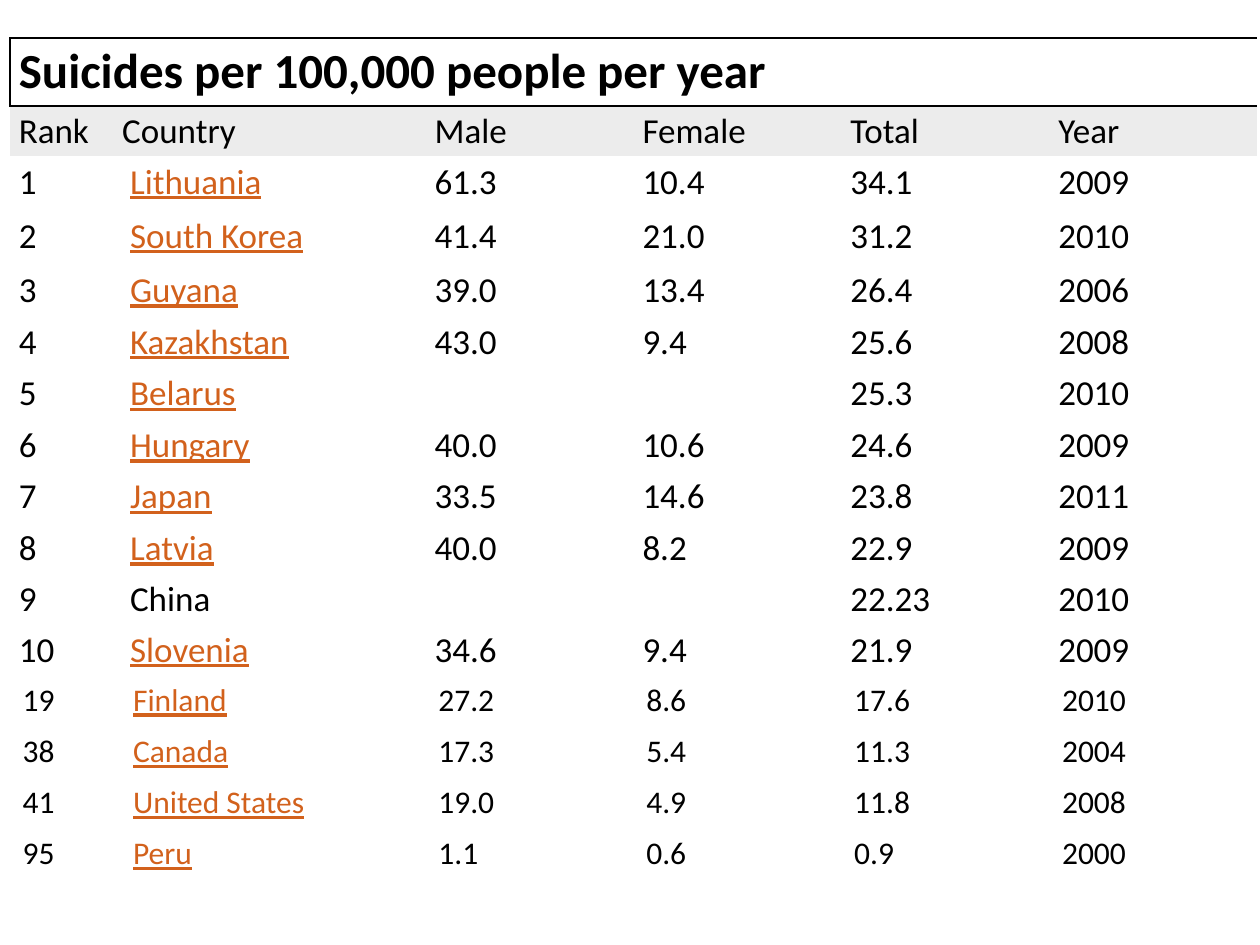
import pptx
import pptx.dml.color
import pptx.enum.text
import pptx.oxml
import pptx.oxml.ns
import pptx.util

Inches = pptx.util.Inches
BLACK = pptx.dml.color.RGBColor(0x00, 0x00, 0x00)
ORANGE = pptx.dml.color.RGBColor(0xD2, 0x61, 0x1C)
BAND = pptx.dml.color.RGBColor(0xEC, 0xEC, 0xEC)
NO_GRID_STYLE = "{2D5ABB26-0587-4C30-8999-92F81FD0307C}"

TITLE = "Suicides per 100,000 people per year"
HEADINGS = ("Rank", "Country", "Male", "Female", "Total", "Year")
TOP_TEN = (
    ("1", "Lithuania", "61.3", "10.4", "34.1", "2009"),
    ("2", "South Korea", "41.4", "21.0", "31.2", "2010"),
    ("3", "Guyana", "39.0", "13.4", "26.4", "2006"),
    ("4", "Kazakhstan", "43.0", "9.4", "25.6", "2008"),
    ("5", "Belarus", "", "", "25.3", "2010"),
    ("6", "Hungary", "40.0", "10.6", "24.6", "2009"),
    ("7", "Japan", "33.5", "14.6", "23.8", "2011"),
    ("8", "Latvia", "40.0", "8.2", "22.9", "2009"),
    ("9", "China", "", "", "22.23", "2010"),
    ("10", "Slovenia", "34.6", "9.4", "21.9", "2009"),
)
OTHERS = (
    ("19", "Finland", "27.2", "8.6", "17.6", "2010"),
    ("38", "Canada", "17.3", "5.4", "11.3", "2004"),
    ("41", "United States", "19.0", "4.9", "11.8", "2008"),
    ("95", "Peru", "1.1", "0.6", "0.9", "2000"),
)
BLANK_ROW = ("",) * len(HEADINGS)
COLUMN_WIDTHS = [0.82, 2.48] + [1.65] * 4
ROW_HEIGHTS = [0.54, 0.4, 0.41, 0.45] + [0.41] * 6 + [0.4] * 7


def style_cell(cell, size, side, edge, bold=False):
    cell.vertical_anchor = pptx.enum.text.MSO_ANCHOR.MIDDLE
    cell.margin_left = cell.margin_right = Inches(side)
    cell.margin_top = cell.margin_bottom = Inches(edge)
    cell.fill.background()
    font = cell.text_frame.paragraphs[0].font
    font.name = "Calibri"
    font.size = pptx.util.Pt(size)
    font.bold = bold
    font.color.rgb = BLACK


def write_country(cell, country):
    paragraph = cell.text_frame.paragraphs[0]
    paragraph.add_run().text = " "
    name = paragraph.add_run()
    name.text = country
    if country != "China":
        name.font.color.rgb = ORANGE
        name.font.underline = True


def add_borders(cell, edges):
    properties = cell._tc.get_or_add_tcPr()
    for position, edge in enumerate(edges):
        border = pptx.oxml.parse_xml(
            f'<a:ln{edge} {pptx.oxml.ns.nsdecls("a")} w="12700">'
            f'<a:solidFill><a:srgbClr val="{BLACK}"/></a:solidFill></a:ln{edge}>'
        )
        properties.insert(position, border)


def fill_title(table):
    cells = list(table.rows[0].cells)
    cells[0].merge(cells[-1])
    cells[0].text = TITLE
    style_cell(cells[0], 28, 0.07, 0.03, bold=True)
    add_borders(cells[0], "LTB")
    for cell in cells[1:-1]:
        add_borders(cell, "T")
    add_borders(cells[-1], "RT")


def fill_rows(table, first, records, size, side, edge):
    for row, record in enumerate(records, first):
        for column, value in enumerate(record):
            cell = table.cell(row, column)
            if row > 1 and column == 1 and value:
                write_country(cell, value)
            else:
                cell.text = value
            style_cell(cell, size, side, edge)


def add_rate_table(slide, left, top, width, height):
    table = slide.shapes.add_table(
        len(ROW_HEIGHTS), len(COLUMN_WIDTHS), left, top, width, height
    ).table
    table.first_row = table.horz_banding = False
    table._tbl.tblPr.find(pptx.oxml.ns.qn("a:tableStyleId")).text = NO_GRID_STYLE
    for column, column_width in zip(table.columns, COLUMN_WIDTHS):
        column.width = Inches(column_width)
    for row, row_height in zip(table.rows, ROW_HEIGHTS):
        row.height = Inches(row_height)

    fill_title(table)
    fill_rows(table, 1, (HEADINGS,) + TOP_TEN, 20, 0.07, 0.03)
    fill_rows(table, 12, OTHERS + (BLANK_ROW,), 18, 0.1, 0.05)
    for cell in table.rows[1].cells:
        cell.fill.solid()
        cell.fill.fore_color.rgb = BAND


def main():
    deck = pptx.Presentation()
    deck.slide_width, deck.slide_height = Inches(10), Inches(7.5)
    slide = deck.slides.add_slide(deck.slide_layouts[6])
    add_rate_table(slide, Inches(0.08), Inches(0.3), Inches(9.92), Inches(7.03))
    deck.save("out.pptx")


if __name__ == "__main__":
    main()
